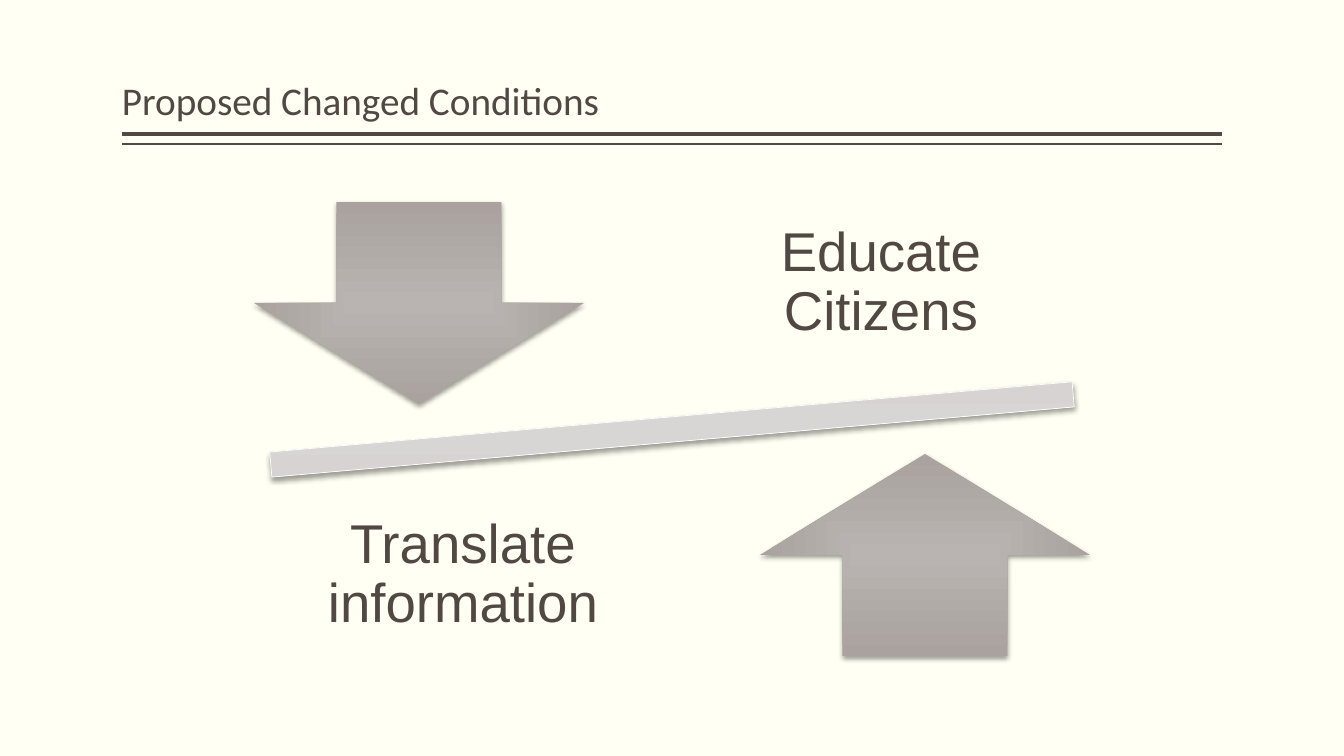
import lxml.etree
import pptx
import pptx.dml.color
import pptx.enum.shapes
import pptx.enum.text
import pptx.oxml
import pptx.oxml.ns
import pptx.util

PX = 914400 / 100.8
INK = "514843"
MSO = pptx.enum.shapes.MSO_SHAPE
ANCHOR = pptx.enum.text.MSO_ANCHOR
ALIGN = pptx.enum.text.PP_ALIGN
qn = pptx.oxml.ns.qn


def px(n):
    """Turn px into EMU."""
    return pptx.util.Emu(round(n * PX))


def rgb(code):
    """Turn a hex string into a colour."""
    return pptx.dml.color.RGBColor.from_string(code)


def set_text(sp, text, font, size, align, anchor, margins):
    """Fill a shape with one formatted paragraph."""
    tf = sp.text_frame
    tf.text = text
    tf.word_wrap = True
    tf.auto_size = pptx.enum.text.MSO_AUTO_SIZE.NONE
    tf.vertical_anchor = anchor
    tf.margin_left = tf.margin_right = px(margins[0])
    tf.margin_top = tf.margin_bottom = px(margins[1])
    p = tf.paragraphs[0]
    p.alignment = align
    p.line_spacing = 0.9
    r = p.runs[0]
    r.font.name = font
    r.font.size = pptx.util.Pt(size)
    r.font.color.rgb = rgb(INK)


def add_rule(slide, x, y, w, weight):
    """Draw a horizontal line without shadow."""
    line = slide.shapes.add_connector(
        pptx.enum.shapes.MSO_CONNECTOR.STRAIGHT, px(x), px(y), px(x + w), px(y))
    line.line.color.rgb = rgb(INK)
    line.line.width = pptx.util.Pt(weight)
    lxml.etree.SubElement(line._element.spPr, qn("a:effectLst"))


def add_solid(slide, kind, x, y, w, h, inner, outer):
    """Add a shape with a rectangular gradient and a soft shadow below."""
    sp = slide.shapes.add_shape(kind, px(x), px(y), px(w), px(h))
    sp.line.fill.background()
    sp.fill.gradient()
    for stop, code in zip(sp.fill.gradient_stops, (inner, outer)):
        stop.color.rgb = rgb(code)
    lin = sp._element.spPr.find(".//" + qn("a:lin"))
    ns = pptx.oxml.ns.nsdecls("a")
    lin.getparent().replace(lin, pptx.oxml.parse_xml(
        f'<a:path {ns} path="rect">'
        '<a:fillToRect l="50000" t="50000" r="50000" b="50000"/></a:path>'))
    sp.shadow.inherit = False
    sp._element.spPr.find(qn("a:effectLst")).append(pptx.oxml.parse_xml(
        f'<a:outerShdw {ns} blurRad="44450" dist="25400" dir="5400000" '
        'algn="ctr" rotWithShape="0"><a:srgbClr val="000000">'
        '<a:alpha val="38000"/></a:srgbClr></a:outerShdw>'))
    return sp


def add_heading(slide, text, x, y, w, h):
    """Place the title and the double rule under it."""
    title = slide.shapes.title
    title.left, title.top, title.width, title.height = px(x), px(y), px(w), px(h)
    set_text(title, text, "Calibri", 28, ALIGN.LEFT, ANCHOR.BOTTOM, (0, 5))
    add_rule(slide, x, y + h + 5, w, 3)
    add_rule(slide, x, y + h + 15, w, 1)


def add_balance(slide, upper, lower, x, y, w, h):
    """Draw a tilted bar with arrows and labels mirrored about its centre."""
    cx, cy = x + w // 2, y + h // 2
    bar = add_solid(slide, MSO.MATH_MINUS, x, cy - 53, w, 107, "D8D6D5", "D1CECC")
    bar.rotation = 355
    bar.line.color.rgb = rgb("FFFFFF")
    bar.line.width = pptx.util.Pt(0.5)
    arrow_w, arrow_h, label_w, label_h = 330, 202, 352, 212
    for side, kind, text in ((-1, MSO.DOWN_ARROW, upper), (1, MSO.UP_ARROW, lower)):
        add_solid(slide, kind, cx + side * 253 - arrow_w // 2,
                  cy + side * 126 - arrow_h // 2, arrow_w, arrow_h,
                  "B9B4B1", "A9A29E")
        label = slide.shapes.add_textbox(
            px(cx - side * 209 - label_w // 2), px(cy + side * 146 - label_h // 2),
            px(label_w), px(label_h))
        set_text(label, text, "Arial", 39, ALIGN.CENTER, ANCHOR.MIDDLE, (30, 30))


def main():
    """Build and save the slide."""
    prs = pptx.Presentation()
    prs.slide_width, prs.slide_height = px(1344), px(756)
    slide = prs.slides.add_slide(prs.slide_layouts[5])
    slide.background.fill.solid()
    slide.background.fill.fore_color.rgb = rgb("FFFFF3")
    add_heading(slide, "Proposed Changed Conditions", 122, 8, 1100, 121)
    add_balance(slide, "Educate Citizens", "Translate information", 124, 176, 1096, 506)
    prs.save("out.pptx")


if __name__ == "__main__":
    main()
